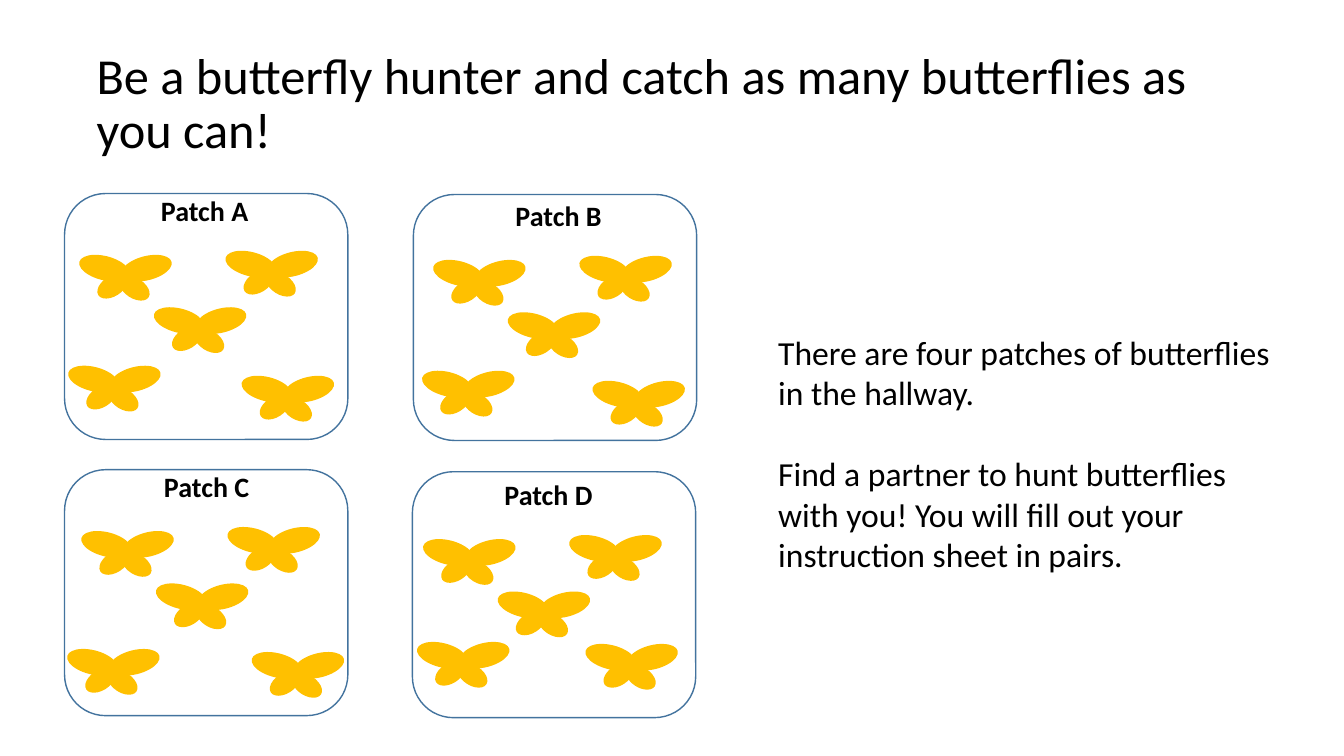
import pptx
import pptx.util
import pptx.dml.color
import pptx.enum.shapes
import pptx.enum.text

Inches = pptx.util.Inches
Pt = pptx.util.Pt
RGBColor = pptx.dml.color.RGBColor
SHAPE = pptx.enum.shapes.MSO_SHAPE
ALIGN = pptx.enum.text.PP_ALIGN
ANCHOR = pptx.enum.text.MSO_ANCHOR

BLACK = RGBColor(0x00, 0x00, 0x00)
GOLD = RGBColor(0xFF, 0xC0, 0x00)
BLUE = RGBColor(0x43, 0x73, 0x9E)

TITLE = "Be a butterfly hunter and catch as many butterflies as you can!"
TASKS = [
    "There are four patches of butterflies in the hallway.",
    "Find a partner to hunt butterflies with you! You will fill out your instruction sheet in pairs.",
]
WINGS = [
    (0, 0, 0.51, 0.24, 14.1),
    (0.42, 0, 0.51, 0.24, 345.9),
    (0.17, 0.2, 0.33, 0.2, 327.4),
    (0.39, 0.22, 0.33, 0.2, 32.6),
]
TRIO = [(0, 0), (0.74, 0.52), (1.45, -0.04)]
PATCHES = [
    ("Patch A", (0.64, 1.92), (0.42, -0.05), (0.14, 0.62), [(0.03, 1.72), (1.75, 1.82)]),
    ("Patch B", (4.1, 1.93), (0.47, -0.01), (0.19, 0.66), [(0.08, 1.76), (1.77, 1.86)]),
    ("Patch C", (0.64, 4.66), (0.44, -0.05), (0.16, 0.62), [(0.02, 1.79), (1.85, 1.82)]),
    ("Patch D", (4.09, 4.68), (0.38, 0.01), (0.1, 0.68), [(0.04, 1.7), (1.71, 1.72)]),
]


def add_text(shapes, box, lines, font, para):
    """Place lines of text in a box and return its frame."""
    frame = shapes.add_textbox(*map(Inches, box)).text_frame
    frame.word_wrap = True
    for index, line in enumerate(lines):
        item = frame.paragraphs[0] if index == 0 else frame.add_paragraph()
        run = item.add_run()
        run.text = line
        for name, value in {"name": "Calibri", **font}.items():
            setattr(run.font, name, value)
        run.font.color.rgb = BLACK
        for name, value in para.items():
            setattr(item, name, value)
    return frame


def add_title(slide, box):
    """Place the slide title in the middle of its box."""
    frame = add_text(slide.shapes, box, [TITLE], {"size": Pt(36)}, {"line_spacing": 0.9})
    frame.vertical_anchor = ANCHOR.MIDDLE


def add_bug(shapes, left, top):
    """Place one butterfly of four wings."""
    for x, y, width, height, angle in WINGS:
        box = (left + x, top + y, width, height)
        wing = shapes.add_shape(SHAPE.OVAL, *map(Inches, box))
        wing.rotation = angle
        wing.shadow.inherit = False
        wing.fill.solid()
        wing.fill.fore_color.rgb = GOLD
        wing.line.fill.background()


def add_patch(slide, box, name, label, first, lower):
    """Place a framed patch with its butterflies and label."""
    left, top, width, height = box
    shapes = slide.shapes.add_group_shape().shapes
    upper = [(first[0] + x, first[1] + y) for x, y in TRIO]
    for x, y in upper + lower:
        add_bug(shapes, left + x, top + y)
    place = (left + label[0], top + label[1], 1.94, 0.44)
    add_text(shapes, place, [name], {"size": Pt(20), "bold": True}, {"alignment": ALIGN.CENTER})
    frame = shapes.add_shape(SHAPE.ROUNDED_RECTANGLE, *map(Inches, box))
    frame.shadow.inherit = False
    frame.fill.background()
    frame.line.color.rgb = BLUE
    frame.line.width = Pt(1)


def add_tasks(slide, box):
    """Place the instructions with a line of space between them."""
    frame = add_text(slide.shapes, box, TASKS, {"size": Pt(24)}, {})
    frame.paragraphs[1].space_before = Pt(29.3)


def main():
    """Build and save the slide."""
    deck = pptx.Presentation()
    deck.slide_width = Inches(13.33)
    deck.slide_height = Inches(7.5)
    slide = deck.slides.add_slide(deck.slide_layouts[6])
    add_title(slide, (0.86, 0.32, 11.5, 1.45))
    for name, corner, label, first, lower in PATCHES:
        add_patch(slide, (*corner, 2.81, 2.44), name, label, first, lower)
    add_tasks(slide, (7.62, 3.24, 5.17, 2.52))
    deck.save("out.pptx")


if __name__ == "__main__":
    main()
